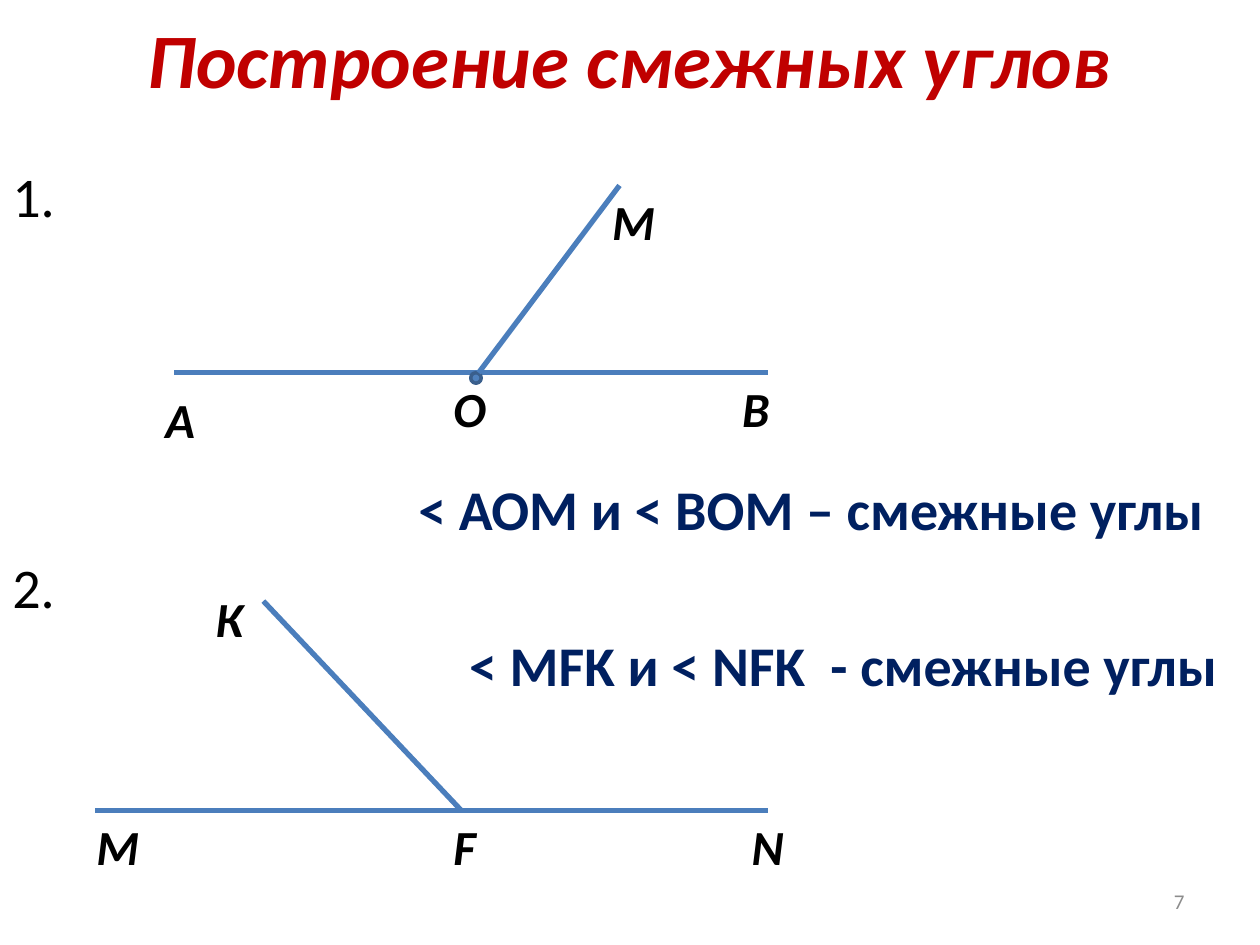
from lxml import etree
from pptx import Presentation
from pptx import util as u
from pptx.dml.color import RGBColor
from pptx.enum import shapes, text
from pptx.oxml import ns

RED = RGBColor(0xC0, 0x00, 0x00)
NAVY = RGBColor(0x00, 0x20, 0x60)
BLACK = RGBColor(0x00, 0x00, 0x00)
GRAY = RGBColor(0x8C, 0x8C, 0x8C)
LINE = RGBColor(0x4B, 0x7E, 0xBC)
DOT_FILL = RGBColor(0x4F, 0x81, 0xBD)
DOT_LINE = RGBColor(0x3A, 0x5F, 0x8C)

LEFT = text.PP_ALIGN.LEFT
CENTER = text.PP_ALIGN.CENTER
RIGHT = text.PP_ALIGN.RIGHT
TOP = text.MSO_ANCHOR.TOP
MIDDLE = text.MSO_ANCHOR.MIDDLE


def write(tf, content, size=32, color=BLACK, bold=False, italic=False, align=LEFT):
    p = tf.paragraphs[0]
    p.alignment = align
    r = p.add_run()
    r.text = content
    r.font.name = "Calibri"
    r.font.size = u.Pt(size)
    r.font.color.rgb = color
    r.font.bold = bold
    r.font.italic = italic


class Board:
    def __init__(self, slide):
        self.s = slide

    def text(self, content, x, y, w, h, anchor=TOP, **style):
        sp = self.s.shapes.add_textbox(u.Pt(x), u.Pt(y), u.Pt(w), u.Pt(h))
        tf = sp.text_frame
        tf.word_wrap = True
        tf.vertical_anchor = anchor
        write(tf, content, **style)

    def label(self, letter, x, y, w=44):
        self.text(letter, x, y, w, 41, size=28, bold=True, italic=True)

    def line(self, start, end):
        sp = self.s.shapes.add_connector(
            shapes.MSO_CONNECTOR.STRAIGHT, *map(u.Pt, start + end))
        sp.line.color.rgb = LINE
        sp.line.width = u.Pt(3)
        etree.SubElement(sp._element.spPr, ns.qn("a:effectLst"))

    def dot(self, x, y, d):
        sp = self.s.shapes.add_shape(
            shapes.MSO_SHAPE.OVAL, u.Pt(x), u.Pt(y), u.Pt(d), u.Pt(d))
        sp.shadow.inherit = False
        sp.fill.solid()
        sp.fill.fore_color.rgb = DOT_FILL
        sp.line.color.rgb = DOT_LINE
        sp.line.width = u.Pt(2)


def main():
    prs = Presentation()
    prs.slide_width, prs.slide_height = u.Pt(720), u.Pt(540)
    b = Board(prs.slides.add_slide(prs.slide_layouts[6]))

    b.text("Построение смежных углов", 36, 0, 648, 65.5, anchor=MIDDLE,
           size=44, color=RED, bold=True, italic=True, align=CENTER)

    first_row, pitch = 88.6, 44.7
    for content, row, x, w, style in (
        ("1.", 0, 0, 60, {}),
        ("< АОМ и < ВОМ – смежные углы", 4, 232, 488, {"color": NAVY, "bold": True}),
        ("2.", 5, 0, 60, {}),
        ("< MFK и < NFK  - смежные углы", 6, 261, 459, {"color": NAVY, "bold": True}),
    ):
        b.text(content, x, first_row + row * pitch, w, 46, **style)
    b.text("7", 516, 500.5, 168, 28.75, anchor=MIDDLE, size=12, color=GRAY, align=RIGHT)

    base_1, base_2 = 213, 463
    vertex_o, vertex_f = (273.5, base_1), (263.5, base_2)

    b.line((99.5, base_1), (439, base_1))
    b.dot(269, base_1, 6)
    b.line(vertex_o, (354, 106))
    b.label("А", 87.5, 219)
    b.label("В", 417, base_1)
    b.label("О", 252, base_1)
    b.label("М", 342.7, 106, w=28)

    for end in ((54, base_2), (150.5, 343.5), (439, base_2)):
        b.line(vertex_f, end)
    for letter, x in (("М", 48), ("F", 252), ("N", 422.5)):
        b.label(letter, x, base_2)
    b.label("К", 116, 332.5)

    prs.save("out.pptx")


if __name__ == "__main__":
    main()
